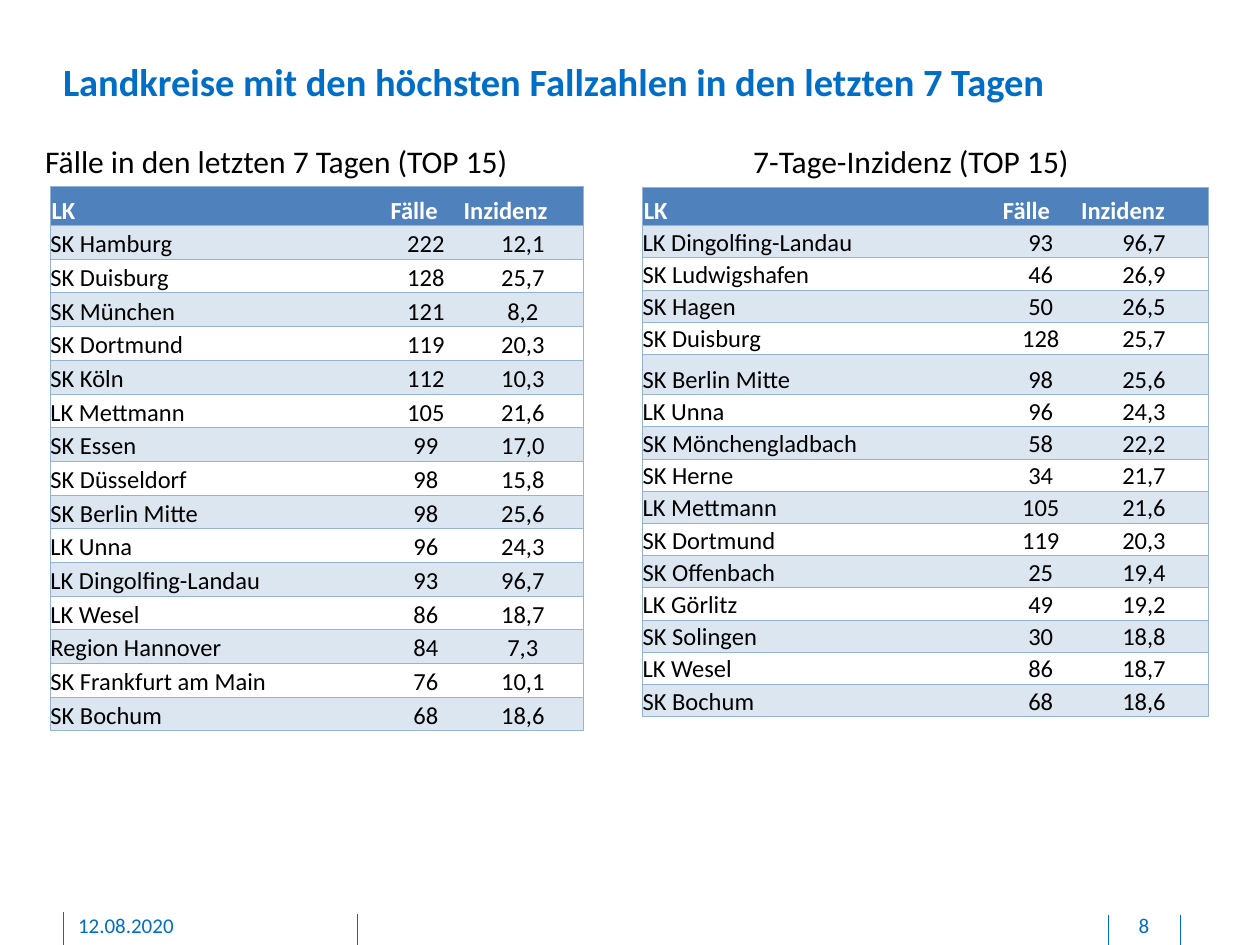
from lxml import etree
from pptx import Presentation
from pptx.dml.color import RGBColor
from pptx.enum.shapes import MSO_CONNECTOR
from pptx.enum.text import MSO_ANCHOR, PP_ALIGN
from pptx.oxml.ns import qn
from pptx.util import Inches, Pt

BLUE = RGBColor(0x00, 0x6E, 0xC7)
BLACK = RGBColor(0x00, 0x00, 0x00)
WHITE = RGBColor(0xFF, 0xFF, 0xFF)
HEADER = RGBColor(0x4F, 0x81, 0xBD)
BAND = RGBColor(0xDC, 0xE6, 0xF1)
BORDER = RGBColor(0x95, 0xB3, 0xD7)

LEFT, CENTER = PP_ALIGN.LEFT, PP_ALIGN.CENTER
BOTTOM = MSO_ANCHOR.BOTTOM
STRAIGHT = MSO_CONNECTOR.STRAIGHT
FONT = "Calibri"
NO_STYLE = "{2D5ABB26-0587-4C30-8999-92F81FD0307C}"

COLUMNS = ("LK", "Fälle", "Inzidenz")
BY_CASES = [
    ("SK Hamburg", "222", "12,1"),
    ("SK Duisburg", "128", "25,7"),
    ("SK München", "121", "8,2"),
    ("SK Dortmund", "119", "20,3"),
    ("SK Köln", "112", "10,3"),
    ("LK Mettmann", "105", "21,6"),
    ("SK Essen", "99", "17,0"),
    ("SK Düsseldorf", "98", "15,8"),
    ("SK Berlin Mitte", "98", "25,6"),
    ("LK Unna", "96", "24,3"),
    ("LK Dingolfing-Landau", "93", "96,7"),
    ("LK Wesel", "86", "18,7"),
    ("Region Hannover", "84", "7,3"),
    ("SK Frankfurt am Main", "76", "10,1"),
    ("SK Bochum", "68", "18,6"),
]
BY_INCIDENCE = [
    ("LK Dingolfing-Landau", "93", "96,7"),
    ("SK Ludwigshafen", "46", "26,9"),
    ("SK Hagen", "50", "26,5"),
    ("SK Duisburg", "128", "25,7"),
    ("SK Berlin Mitte", "98", "25,6"),
    ("LK Unna", "96", "24,3"),
    ("SK Mönchengladbach", "58", "22,2"),
    ("SK Herne", "34", "21,7"),
    ("LK Mettmann", "105", "21,6"),
    ("SK Dortmund", "119", "20,3"),
    ("SK Offenbach", "25", "19,4"),
    ("LK Görlitz", "49", "19,2"),
    ("SK Solingen", "30", "18,8"),
    ("LK Wesel", "86", "18,7"),
    ("SK Bochum", "68", "18,6"),
]


def add_run(tf, text, size, color, bold=False, align=LEFT):
    p = tf.paragraphs[0]
    p.alignment = align
    r = p.add_run()
    r.text = text
    r.font.name = FONT
    r.font.size = Pt(size)
    r.font.bold = bold
    r.font.color.rgb = color


def add_text(s, box, text, size, color, bold=False, align=LEFT,
             insets=(0, 0, 0, 0), wrap=True):
    tf = s.shapes.add_textbox(*map(Inches, box)).text_frame
    tf.word_wrap = wrap
    (tf.margin_left, tf.margin_top,
     tf.margin_right, tf.margin_bottom) = map(Inches, insets)
    add_run(tf, text, size, color, bold, align)


def add_rule(s, x, top):
    line = s.shapes.add_connector(
        STRAIGHT, Inches(x), Inches(top), Inches(x), Inches(7.5))
    line.line.color.rgb = BLUE
    line.line.width = Pt(0.5)
    etree.SubElement(line._element.spPr, qn("a:effectLst"))


def set_borders(cell, sides):
    tc_pr = cell._tc.get_or_add_tcPr()
    for side in sides:
        ln = etree.SubElement(tc_pr, qn(f"a:ln{side}"), w=str(Pt(0.5)))
        fill = etree.SubElement(ln, qn("a:solidFill"))
        etree.SubElement(fill, qn("a:srgbClr"), val=str(BORDER))


def fill_cell(cell, text, row, col, last_col):
    is_header = row == 0
    inset = Inches(0.01 if is_header else 0)
    cell.margin_left = cell.margin_right = cell.margin_top = inset
    cell.margin_bottom = 0
    cell.vertical_anchor = BOTTOM

    # Outer frame plus horizontal rules
    set_borders(cell, ("L" if col == 0 else "")
                + ("R" if col == last_col else "") + "TB")
    if is_header:
        cell.fill.solid()
        cell.fill.fore_color.rgb = HEADER
    elif row % 2:
        cell.fill.solid()
        cell.fill.fore_color.rgb = BAND
    else:
        cell.fill.background()

    align = LEFT if is_header or col == 0 else CENTER
    add_run(cell.text_frame, text, 14, WHITE if is_header else BLACK,
            is_header, align)


def add_ranking(s, box, widths, heights, data):
    rows = [COLUMNS] + data
    frame = s.shapes.add_table(len(rows), len(COLUMNS), *map(Inches, box))
    table = frame.table
    table._tbl.tblPr.find(qn("a:tableStyleId")).text = NO_STYLE
    for column, width in zip(table.columns, widths):
        column.width = Inches(width)

    # Rows without a height of their own share what is left
    shared = (box[3] - sum(heights.values())) / (len(rows) - len(heights))
    for i, values in enumerate(rows):
        table.rows[i].height = Inches(heights.get(i, shared))
        for j, text in enumerate(values):
            fill_cell(table.cell(i, j), text, i, j, len(COLUMNS) - 1)


def main():
    prs = Presentation()
    prs.slide_width, prs.slide_height = Inches(10), Inches(7.5)
    s = prs.slides.add_slide(prs.slide_layouts[6])

    # Footer rules
    for x, top in ((2.84, 7.25), (0.5, 7.24), (9.37, 7.26), (8.8, 7.26)):
        add_rule(s, x, top)

    # Title
    add_text(s, (0.5, 0.46, 8.85, 0.37),
             "Landkreise mit den höchsten Fallzahlen in den letzten 7 Tagen",
             22, BLUE, bold=True)

    # Date and slide number
    footer = (0, 0, 0, 0.05)
    add_text(s, (0.62, 7.24, 2.03, 0.21), "12.08.2020", 12, BLUE,
             insets=footer)
    add_text(s, (8.81, 7.24, 0.54, 0.21), "8", 12, BLUE, align=CENTER,
             insets=footer)

    # Table headings
    heading = (0.1, 0.05, 0.1, 0.05)
    add_text(s, (5.88, 1.08, 2.74, 0.4), "7-Tage-Inzidenz (TOP 15)",
             18, BLACK, insets=heading, wrap=False)
    add_text(s, (0.26, 1.08, 3.92, 0.4),
             "Fälle in den letzten 7 Tagen (TOP 15)",
             18, BLACK, insets=heading, wrap=False)

    # Rankings
    add_ranking(s, (0.4, 1.48, 4.24, 4.32), (2.69, 0.58, 0.96),
                {0: 0.31}, BY_CASES)
    add_ranking(s, (5.1, 1.49, 4.48, 4.2), (2.85, 0.62, 1.02),
                {0: 0.3, 5: 0.32}, BY_INCIDENCE)

    prs.save("out.pptx")


if __name__ == "__main__":
    main()
